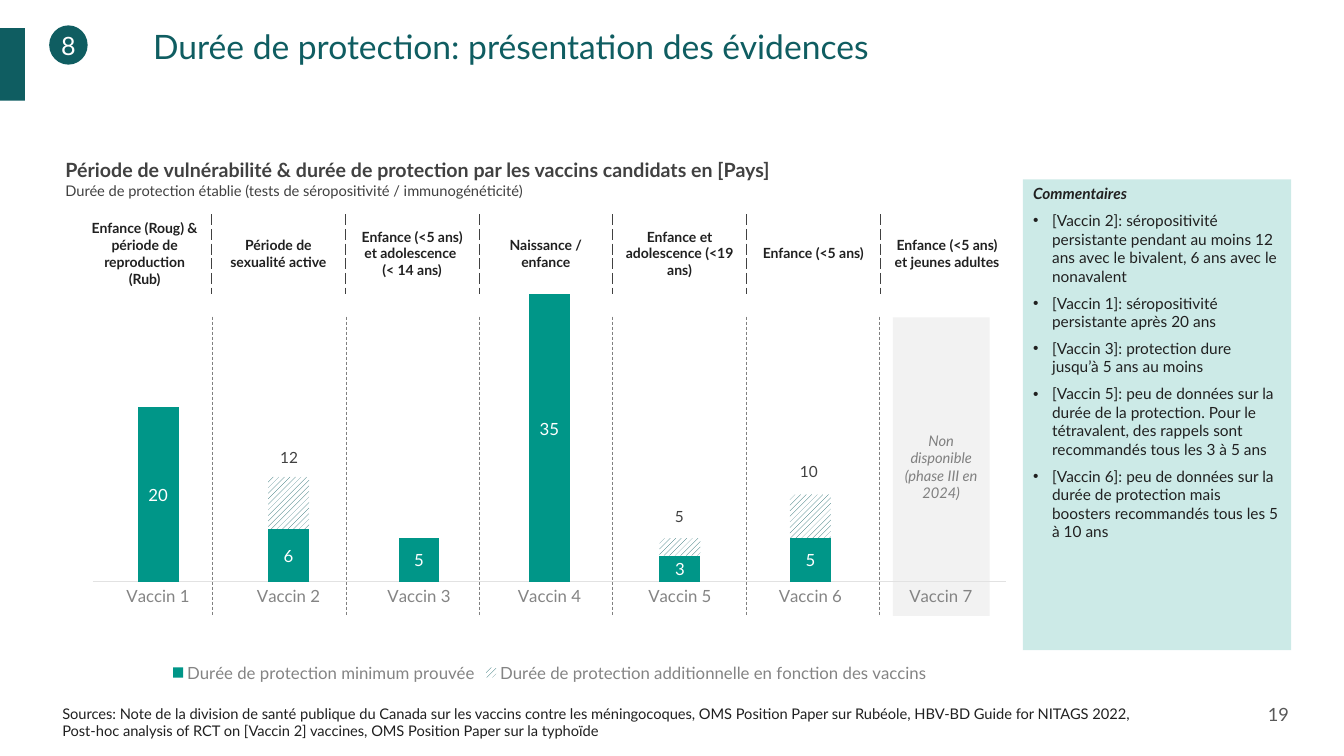
"""Build the slide on how long each vaccine protects."""
import lxml.etree
import pptx
import pptx.chart.data
import pptx.dml.color
import pptx.enum.chart
import pptx.enum.dml
import pptx.enum.shapes
import pptx.enum.text
import pptx.oxml.ns
import pptx.oxml.xmlchemy
import pptx.util

Cm = pptx.util.Cm
Pt = pptx.util.Pt
qn = pptx.oxml.ns.qn
make = pptx.oxml.xmlchemy.OxmlElement
ALIGN = pptx.enum.text.PP_ALIGN
ANCHOR = pptx.enum.text.MSO_ANCHOR
SHAPE = pptx.enum.shapes.MSO_SHAPE

FONT = "Lato"
DEEP, TEAL, WHITE = "0F5D61", "009688", "FFFFFF"
INK, DARK, GREY, PALE = "202020", "414141", "848484", "F2F2F2"

STAGES = [
    ["Enfance (Roug) & période de reproduction (Rub)"],
    ["Période de sexualité active"],
    ["Enfance (<5 ans) et adolescence ", "(< 14 ans)"],
    ["Naissance / enfance"],
    ["Enfance et adolescence (<19 ans)"],
    ["Enfance (<5 ans)"],
    ["Enfance (<5 ans) et jeunes adultes"],
]
PROVEN = [20, 6, 5, 35, 3, 5, None]
EXTRA = [None, 6, None, None, 2, 5, None]
NOTES = [
    "[Vaccin 2]: séropositivité persistante pendant au moins 12 ans avec le bivalent, "
    "6 ans avec le nonavalent",
    "[Vaccin 1]: séropositivité persistante après 20 ans",
    "[Vaccin 3]: protection dure jusqu’à 5 ans au moins",
    "[Vaccin 5]: peu de données sur la durée de la protection. Pour le tétravalent, "
    "des rappels sont recommandés tous les 3 à 5 ans",
    "[Vaccin 6]: peu de données sur la durée de protection mais boosters recommandés "
    "tous les 5 à 10 ans",
]
SOURCE = (
    "Sources: Note de la division de santé publique du Canada sur les vaccins contre les "
    "méningocoques, OMS Position Paper sur Rubéole, HBV-BD Guide for NITAGS 2022, "
    "Post-hoc analysis of RCT on [Vaccin 2] vaccines, OMS Position Paper sur la typhoïde"
)
TOTALS = [("12", 6.81, 11.18), ("10", 19.91, 11.53), ("5", 16.76, 12.65)]


def shade(hue):
    """Turn a hex string into a colour."""
    return pptx.dml.color.RGBColor.from_string(hue)


def style(font, size, hue, bold=False, slant=False):
    """Set face, size, colour and weight of a font."""
    font.name, font.size, font.bold, font.italic = FONT, Pt(size), bold, slant
    font.color.rgb = shade(hue)


def write(frame, lines, align=ALIGN.LEFT, anchor=ANCHOR.TOP):
    """Fill a text frame with one styled run per line."""
    frame.word_wrap = True
    frame.auto_size = pptx.enum.text.MSO_AUTO_SIZE.NONE
    frame.vertical_anchor = anchor
    for i, (text, *look) in enumerate(lines):
        para = frame.add_paragraph() if i else frame.paragraphs[0]
        para.alignment = align
        run = para.add_run()
        run.text = text
        style(run.font, *look)


def place(shape, box):
    """Move a shape to left, top, width and height in centimetres."""
    shape.left, shape.top, shape.width, shape.height = map(Cm, box)


def add_text(slide, box, lines, **kind):
    """Add a text box."""
    frame = slide.shapes.add_textbox(*map(Cm, box)).text_frame
    write(frame, lines, **kind)
    return frame


def add_block(slide, kind, box, hue, lines=()):
    """Add a filled shape with centred text."""
    shape = slide.shapes.add_shape(kind, *map(Cm, box))
    shape.shadow.inherit = False
    shape.fill.solid()
    shape.fill.fore_color.rgb = shade(hue)
    shape.line.fill.background()
    write(shape.text_frame, lines, ALIGN.CENTER, ANCHOR.MIDDLE)
    return shape


def add_rule(slide, x, top, end):
    """Add a dashed upright line."""
    line = slide.shapes.add_connector(
        pptx.enum.shapes.MSO_CONNECTOR.STRAIGHT, Cm(x), Cm(top), Cm(x), Cm(end))
    line.line.color.rgb = shade("808080")
    line.line.width = Pt(0.5)
    line.line.dash_style = pptx.enum.dml.MSO_LINE.DASH
    lxml.etree.SubElement(line._element.spPr, qn("a:effectLst"))


def set_plot(chart, **area):
    """Fix the inner plot area and clear the chart ground."""
    space = chart._chartSpace
    plot = space.find(".//" + qn("c:plotArea"))
    for old in plot.findall(qn("c:layout")):
        plot.remove(old)
    layout = make("c:layout")
    manual = lxml.etree.SubElement(layout, qn("c:manualLayout"))
    parts = dict(layoutTarget="inner", xMode="edge", yMode="edge", **area)
    for name, value in parts.items():
        lxml.etree.SubElement(manual, qn("c:" + name)).set("val", str(value))
    plot.insert(0, layout)
    ground = make("c:spPr")
    lxml.etree.SubElement(ground, qn("a:noFill"))
    edge = lxml.etree.SubElement(ground, qn("a:ln"))
    lxml.etree.SubElement(edge, qn("a:noFill"))
    space.find(qn("c:chart")).addnext(ground)


def add_bars(slide, box):
    """Add the stacked column chart."""
    data = pptx.chart.data.CategoryChartData(number_format="#,##0")
    data.categories = [f"Vaccin {i}" for i in range(1, 8)]
    data.add_series("Durée de protection minimum prouvée", PROVEN)
    data.add_series("Durée de protection additionnelle en fonction des vaccins", EXTRA)
    chart = slide.shapes.add_chart(
        pptx.enum.chart.XL_CHART_TYPE.COLUMN_STACKED, *map(Cm, box), data).chart
    style(chart.font, 12, DARK)
    chart.has_title = False
    chart.has_legend = True
    chart.legend.position = pptx.enum.chart.XL_LEGEND_POSITION.BOTTOM
    chart.legend.include_in_layout = False
    style(chart.legend.font, 12, GREY)
    cats, vals = chart.category_axis, chart.value_axis
    cats.major_tick_mark = pptx.enum.chart.XL_TICK_MARK.NONE
    cats.format.line.color.rgb = shade("E2E2E2")
    cats.format.line.width = Pt(0.75)
    style(cats.tick_labels.font, 12, GREY)
    vals.minimum_scale, vals.maximum_scale = 0, 40
    vals.has_major_gridlines = vals.visible = False
    plot = chart.plots[0]
    plot.gap_width, plot.overlap, plot.vary_by_categories = 219, 100, False
    base, more = plot.series
    base.format.fill.solid()
    base.format.fill.fore_color.rgb = shade(TEAL)
    marks = base.data_labels
    marks.show_value = True
    marks.number_format, marks.number_format_is_linked = "#,##0", False
    style(marks.font, 12, WHITE)
    hatch = more.format.fill
    hatch.patterned()
    hatch.pattern = pptx.enum.dml.MSO_PATTERN.WIDE_UPWARD_DIAGONAL
    hatch.fore_color.rgb, hatch.back_color.rgb = shade(DEEP), shade(WHITE)
    set_plot(chart, x=0.016, y=0.035, w=0.967, h=0.743)


def set_edge(cell, slot, side, hue, width, dash="solid"):
    """Draw one border of a table cell."""
    line = make("a:ln" + side)
    line.set("w", str(Pt(width)))
    fill = lxml.etree.SubElement(line, qn("a:solidFill"))
    lxml.etree.SubElement(fill, qn("a:srgbClr")).set("val", hue)
    lxml.etree.SubElement(line, qn("a:prstDash")).set("val", dash)
    cell._tc.get_or_add_tcPr().insert(slot, line)


def add_heads(slide, box):
    """Add the table of age groups above the columns."""
    table = slide.shapes.add_table(1, len(STAGES), *map(Cm, box)).table
    table.first_row = table.horz_banding = False
    inner, outer = (DARK, 0.5, "sysDash"), (WHITE, 1)
    last = len(STAGES) - 1
    for i, stage in enumerate(STAGES):
        cell = table.cell(0, i)
        cell.fill.solid()
        cell.fill.fore_color.rgb = shade(WHITE)
        write(cell.text_frame, [(text, 10, INK, True) for text in stage], ALIGN.CENTER)
        cell.vertical_anchor = ANCHOR.MIDDLE
        set_edge(cell, 0, "L", *(inner if i else outer))
        set_edge(cell, 1, "R", *(inner if i < last else outer))
        set_edge(cell, 2, "T", *outer)
        set_edge(cell, 3, "B", WHITE, 3)


def fill_notes(body, box):
    """Turn the body placeholder into the tinted comment panel."""
    place(body, box)
    body.fill.solid()
    body.fill.fore_color.rgb = shade(TEAL)
    tint = body._element.spPr.find(".//" + qn("a:srgbClr"))
    lxml.etree.SubElement(tint, qn("a:alpha")).set("val", "20000")
    lines = [("Commentaires", 11, INK, True, True)]
    write(body.text_frame, lines + [(note, 11, INK) for note in NOTES])
    for i, para in enumerate(body.text_frame.paragraphs):
        para.space_before = Pt(6)
        props = para._p.get_or_add_pPr()
        dent = Cm(0.48) if i else 0
        props.set("marL", str(dent))
        props.set("indent", str(-dent))
        if i:
            lxml.etree.SubElement(props, qn("a:buFont")).set("typeface", "Arial")
            lxml.etree.SubElement(props, qn("a:buChar")).set("char", "•")
        else:
            lxml.etree.SubElement(props, qn("a:buNone"))


def main():
    """Build and save the slide."""
    deck = pptx.Presentation()
    deck.slide_width, deck.slide_height = Cm(33.87), Cm(19.05)
    slide = deck.slides.add_slide(deck.slide_layouts[1])
    title, body = slide.placeholders
    place(title, (3.86, 0.64, 29.3, 2.03))
    frame = title.text_frame
    frame.margin_left = frame.margin_top = frame.margin_right = frame.margin_bottom = 0
    write(frame, [("Durée de protection: présentation des évidences", 24, DEEP)])
    fill_notes(body, (25.78, 4.52, 6.76, 11.86))
    add_block(slide, SHAPE.RECTANGLE, (22.5, 8, 2.44, 7.52), PALE,
              [("Non disponible (phase III en 2024)", 10.5, "808080", False, True)])
    for i in range(6):
        add_rule(slide, 5.36 + 3.36 * i, 7.98, 15.52)
    add_block(slide, SHAPE.RECTANGLE, (-0.03, 0.71, 0.66, 1.83), DEEP)
    badge = add_block(slide, SHAPE.OVAL, (1.24, 0.64, 0.97, 0.99), DEEP, [("8", 18, WHITE)])
    badge.text_frame.word_wrap = False
    add_text(slide, (31.7, 17.27, 1.4, 1.45), [("19", 13, "595959")], anchor=ANCHOR.MIDDLE)
    add_text(slide, (1.32, 17.7, 28.27, 0.99), [(SOURCE, 10.5, INK)], anchor=ANCHOR.MIDDLE)
    add_text(slide, (1.4, 3.86, 19.71, 1.3), [
        ("Période de vulnérabilité & durée de protection par les vaccins candidats en [Pays]",
         14, DARK, True),
        ("Durée de protection établie (tests de séropositivité / immunogénéticité)", 10.5, DARK)])
    add_bars(slide, (1.96, 5.44, 23.8, 11.86))
    add_heads(slide, (1.96, 5.41, 23.59, 1.96))
    for text, x, y in TOTALS:
        add_text(slide, (x, y, 0.97, 0.74), [(text, 11, DARK)]).word_wrap = False
    deck.save("out.pptx")


if __name__ == "__main__":
    main()
